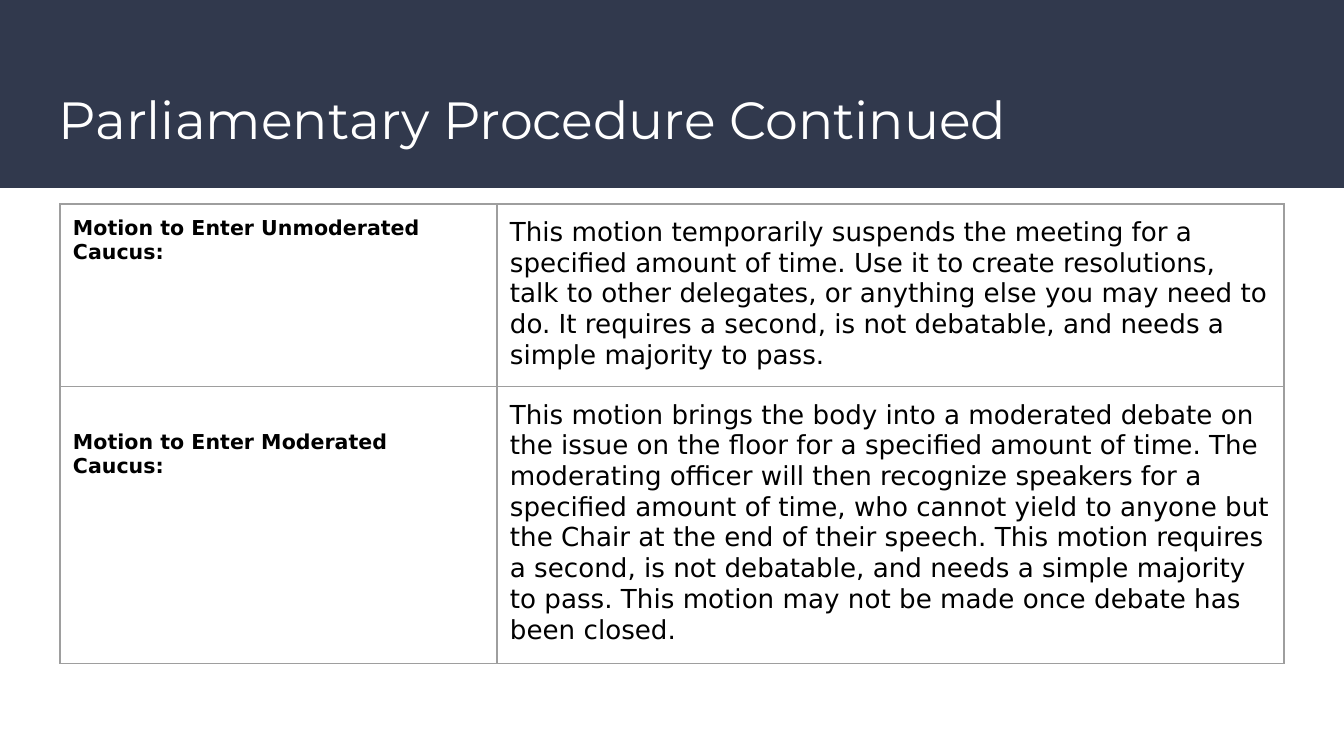
import pptx
import pptx.util
import pptx.dml.color
import pptx.enum.shapes
import pptx.oxml.ns
import lxml.etree

HEADING = "Parliamentary Procedure Continued"
MOTIONS = [
    ("Motion to Enter Unmoderated Caucus:",
     "This motion temporarily suspends the meeting for a specified amount of time. "
     "Use it to create resolutions, talk to other delegates, or anything else you may "
     "need to do. It requires a second, is not debatable, and needs a simple majority to pass."),
    ("Motion to Enter Moderated Caucus:",
     "This motion brings the body into a moderated debate on the issue on the floor for a "
     "specified amount of time. The moderating officer will then recognize speakers for a "
     "specified amount of time, who cannot yield to anyone but the Chair at the end of their "
     "speech. This motion requires a second, is not debatable, and needs a simple majority to "
     "pass. This motion may not be made once debate has been closed."),
]
COLUMN_WIDTHS = [437, 787]
ROW_HEIGHTS = [180, 272]
INSET = 13
NAME_DROPS = [0, 31]
HEADING_FORMAT = {"name": "Montserrat", "size": 28, "bold": False, "color": "FFFFFF"}
MOTION_FORMATS = [
    {"name": "DejaVu Sans", "size": 11, "bold": True, "color": "000000"},
    {"name": "DejaVu Sans", "size": 14, "bold": False, "color": "000000"},
]


def px(length):
    return pptx.util.Emu(round(length * 914400 / 134.4))


def rgb(value):
    return pptx.dml.color.RGBColor.from_string(value)


def write(frame, text, style):
    run = frame.paragraphs[0].add_run()
    run.text = text
    values = {**style, "size": pptx.util.Pt(style["size"])}
    run.font.color.rgb = rgb(values.pop("color"))
    for key, value in values.items():
        setattr(run.font, key, value)


def set_insets(part, drop=0):
    insets = {"margin_left": INSET, "margin_right": INSET,
              "margin_top": INSET + drop, "margin_bottom": INSET}
    for key, value in insets.items():
        setattr(part, key, px(value))


def add_borders(cell, color, points):
    qn = pptx.oxml.ns.qn
    properties = cell._tc.get_or_add_tcPr()
    for side in ("a:lnL", "a:lnR", "a:lnT", "a:lnB"):
        border = lxml.etree.SubElement(properties, qn(side), w=str(int(pptx.util.Pt(points))))
        fill = lxml.etree.SubElement(border, qn("a:solidFill"))
        lxml.etree.SubElement(fill, qn("a:srgbClr"), val=color)


deck = pptx.Presentation()
deck.slide_width, deck.slide_height = px(1344), px(756)
slide = deck.slides.add_slide(deck.slide_layouts[6])

banner = slide.shapes.add_shape(
    pptx.enum.shapes.MSO_SHAPE.RECTANGLE, px(0), px(0), px(1344), px(188))
banner.shadow.inherit = False
banner.fill.solid()
banner.fill.fore_color.rgb = rgb("31394D")
banner.line.fill.background()

heading = slide.shapes.add_textbox(px(46), px(74), px(1255), px(91)).text_frame
heading.word_wrap = True
set_insets(heading)
write(heading, HEADING, HEADING_FORMAT)

motions = slide.shapes.add_table(
    len(MOTIONS), len(COLUMN_WIDTHS), px(60), px(204),
    px(sum(COLUMN_WIDTHS)), px(sum(ROW_HEIGHTS))).table
motions.first_row = False
motions.horz_banding = False
for column, width in zip(motions.columns, COLUMN_WIDTHS):
    column.width = px(width)
for row, height, motion, name_drop in zip(motions.rows, ROW_HEIGHTS, MOTIONS, NAME_DROPS):
    row.height = px(height)
    for cell, text, style, drop in zip(row.cells, motion, MOTION_FORMATS, (name_drop, 0)):
        set_insets(cell, drop)
        add_borders(cell, "9E9E9E", 0.75)
        cell.fill.background()
        write(cell.text_frame, text, style)

deck.save("out.pptx")
